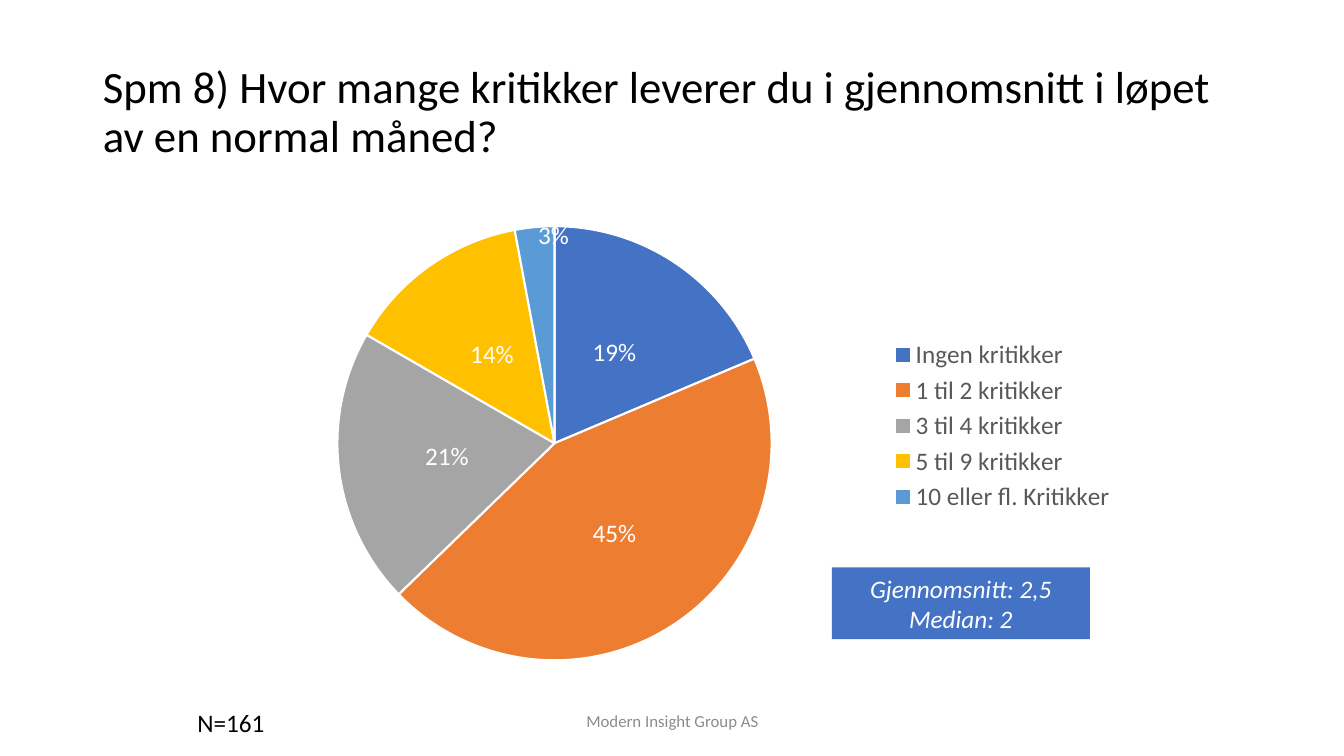
from lxml import etree
from pptx import Presentation
from pptx.chart.data import CategoryChartData
from pptx.dml.color import RGBColor
from pptx.enum.chart import XL_CHART_TYPE as CT, XL_LABEL_POSITION as LP, XL_LEGEND_POSITION as LEG
from pptx.enum.shapes import MSO_SHAPE
from pptx.enum.text import MSO_ANCHOR as ANCHOR, MSO_AUTO_SIZE as AUTO, PP_ALIGN as ALIGN
from pptx.oxml.ns import qn
from pptx.util import Inches, Pt

ANSWERS = {
    "Ingen kritikker": (0.19, "4472C4"),
    "1 til 2 kritikker": (0.45, "ED7D31"),
    "3 til 4 kritikker": (0.21, "A5A5A5"),
    "5 til 9 kritikker": (0.14, "FFC000"),
    "10 eller fl. Kritikker": (0.03, "5B9BD5"),
}


def rgb(value):
    return RGBColor.from_string(value)


def manual_layout(**settings):
    """Return a chart layout element with the given settings in schema order."""
    layout = etree.Element(qn("c:layout"))
    manual = etree.SubElement(layout, qn("c:manualLayout"))
    for tag, value in settings.items():
        etree.SubElement(manual, qn(f"c:{tag}")).set("val", str(value))
    return layout


class SlideBuilder:
    font_name = "Calibri"

    def __init__(self, prs):
        self.s = prs.slides.add_slide(prs.slide_layouts[5])

    def style(self, font, size, color, italic=False):
        font.name, font.size, font.italic = self.font_name, Pt(size), italic
        font.color.rgb = rgb(color)

    def fill_text(self, shape, text, size, color, align=ALIGN.LEFT,
                  anchor=ANCHOR.MIDDLE, italic=False, wrap=True):
        tf = shape.text_frame
        tf.text = text
        tf.word_wrap, tf.vertical_anchor = wrap, anchor
        for p in tf.paragraphs:
            p.alignment = align
            for r in p.runs:
                self.style(r.font, size, color, italic)
        return tf

    def title(self, text, x, y, w, h):
        sp = self.s.shapes.title
        sp.left, sp.top, sp.width, sp.height = map(Inches, (x, y, w, h))
        tf = self.fill_text(sp, text, 32, "000000")
        tf.auto_size = AUTO.NONE
        tf.paragraphs[0].line_spacing = 0.9

    def text(self, text, x, y, w, h, size, color, **options):
        sp = self.s.shapes.add_textbox(*map(Inches, (x, y, w, h)))
        return self.fill_text(sp, text, size, color, **options)

    def box(self, text, x, y, w, h, fill):
        sp = self.s.shapes.add_shape(MSO_SHAPE.RECTANGLE, *map(Inches, (x, y, w, h)))
        sp.shadow.inherit = False
        sp.fill.solid()
        sp.fill.fore_color.rgb = rgb(fill)
        sp.line.fill.background()
        self.fill_text(sp, text, 18, "FFFFFF", align=ALIGN.CENTER, italic=True)

    def pie(self, answers, x, y, w, h):
        data = CategoryChartData(number_format="0%")
        data.categories = list(answers)
        data.add_series("Series 1", [share for share, _ in answers.values()])
        chart = self.s.shapes.add_chart(CT.PIE, *map(Inches, (x, y, w, h)), data).chart
        chart.has_title = False
        self.style(chart.font, 18, "000000")
        chart.has_legend = True
        chart.legend.position = LEG.RIGHT
        chart.legend.include_in_layout = False
        self.style(chart.legend.font, 18, "595959")

        plot = chart.plots[0]
        plot.vary_by_categories = True
        series = plot.series[0]
        for i, (_, color) in enumerate(answers.values()):
            fmt = series.points[i].format
            fmt.fill.solid()
            fmt.fill.fore_color.rgb = rgb(color)
            fmt.line.color.rgb = rgb("FFFFFF")
            fmt.line.width = Pt(1.5)

        labels = series.data_labels
        labels.show_value = True
        labels.show_percentage = False
        labels.number_format, labels.number_format_is_linked = "0%", False
        labels.position = LP.CENTER
        self.style(labels.font, 18, "FFFFFF")

        # The narrowest slice has room for its label only near the rim.
        narrow = series.points[len(answers) - 1].data_label
        narrow.position = LP.CENTER
        self.style(narrow.font, 18, "FFFFFF")
        idx = labels._element.find(qn("c:dLbl")).find(qn("c:idx"))
        idx.addnext(manual_layout(x=0.01, y=-0.2))

        area = chart._chartSpace.chart.plotArea
        for old in area.findall(qn("c:layout")):
            area.remove(old)
        area.insert(0, manual_layout(layoutTarget="inner", xMode="edge", yMode="edge",
                                     x=0.13, y=0.1, w=0.48, h=0.87))


def main():
    prs = Presentation()
    prs.slide_width, prs.slide_height = Inches(13.33), Inches(7.5)
    slide = SlideBuilder(prs)
    slide.title("Spm 8) Hvor mange kritikker leverer du i gjennomsnitt i løpet "
                "av en normal måned?", 0.92, 0.4, 11.5, 1.45)
    slide.pie(ANSWERS, 2.17, 1.75, 9, 4.95)
    slide.text("Modern Insight Group AS", 4.42, 6.95, 4.5, 0.4, 12, "8C8C8C",
               align=ALIGN.CENTER)
    sample = slide.text("N=161", 1.86, 6.97, 0.87, 0.4, 18, "000000",
                        anchor=ANCHOR.TOP, wrap=False)
    sample.auto_size = AUTO.SHAPE_TO_FIT_TEXT
    slide.box("Gjennomsnitt: 2,5\vMedian: 2", 8.25, 5.63, 2.56, 0.71, "4472C4")
    prs.save("out.pptx")


if __name__ == "__main__":
    main()
